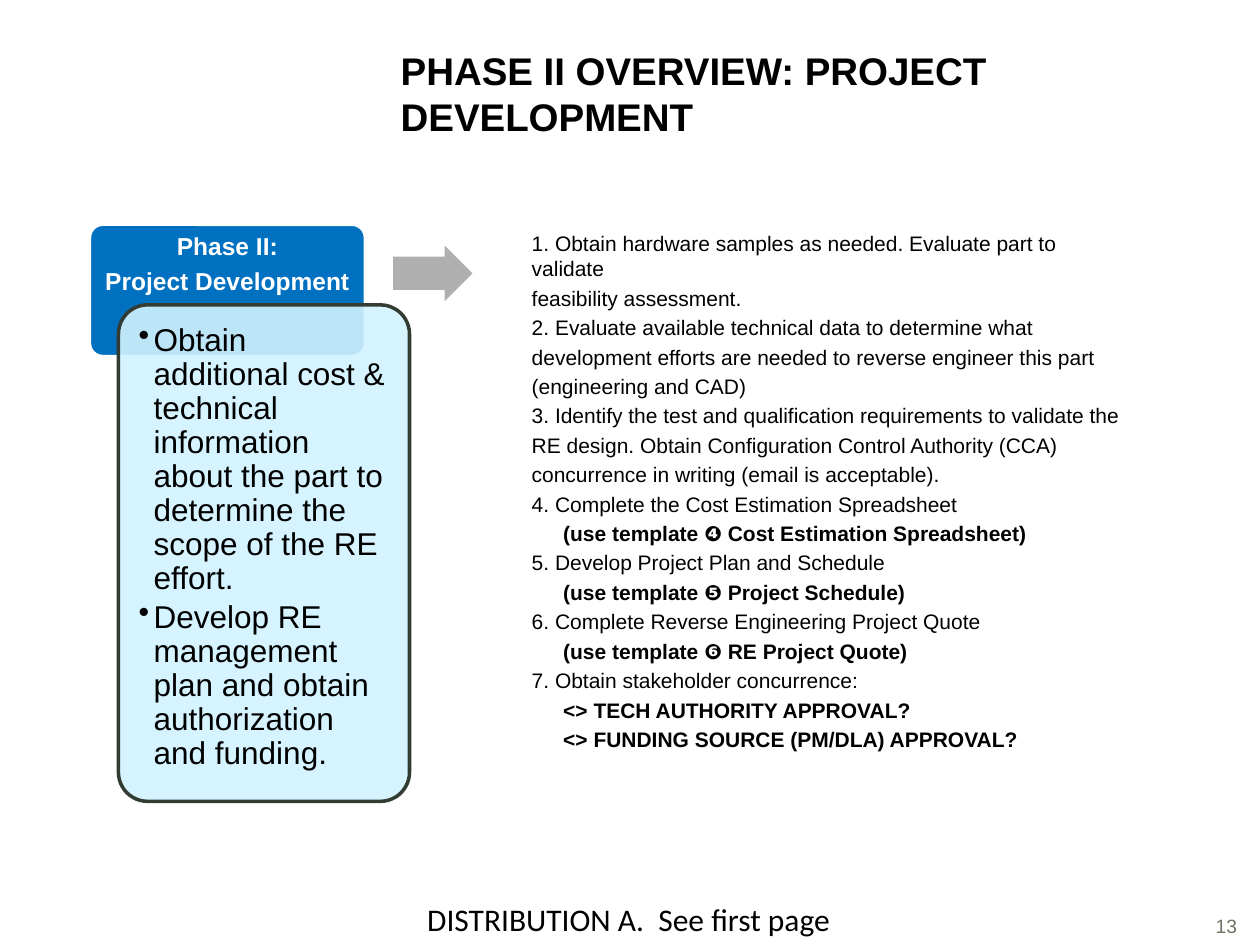
from dataclasses import dataclass

from lxml.etree import SubElement
from pptx import Presentation
from pptx.dml.color import RGBColor
from pptx.enum.shapes import MSO_SHAPE
from pptx.enum.text import MSO_ANCHOR, MSO_AUTO_SIZE, PP_ALIGN
from pptx.oxml.ns import qn
from pptx.util import Inches, Pt


@dataclass(frozen=True)
class Theme:
    font: str = "Arial"
    footer_font: str = "Calibri"
    black: str = "000000"
    white: str = "FFFFFF"
    number_grey: str = "717365"
    phase_blue: str = "0070C0"
    card_blue: str = "D1F3FF"
    card_edge: str = "333C33"
    arrow_grey: str = "AEAFAE"
    title_size: float = 22
    large_size: float = 18
    phase_size: float = 14
    body_size: float = 12
    number_size: float = 11


TITLE = "PHASE II OVERVIEW: PROJECT DEVELOPMENT"
PHASE_LINES = ["Phase II:", "Project Development"]
GOALS = [
    "Obtain additional cost & technical information about the part to "
    "determine the scope of the RE effort.",
    "Develop RE management plan and obtain authorization and funding.",
]
# Each step is its text and whether it is an indented bold line.
STEPS = [
    ("1. Obtain hardware samples as needed. Evaluate part to validate", False),
    ("feasibility assessment.", False),
    ("2. Evaluate available technical data to determine what", False),
    ("development efforts are needed to reverse engineer this part", False),
    ("(engineering and CAD)", False),
    ("3. Identify the test and qualification requirements to validate the", False),
    ("RE design. Obtain Configuration Control Authority (CCA)", False),
    ("concurrence in writing (email is acceptable).", False),
    ("4. Complete the Cost Estimation Spreadsheet", False),
    ("(use template ❹ Cost Estimation Spreadsheet)", True),
    ("5. Develop Project Plan and Schedule", False),
    ("(use template ❺ Project Schedule)", True),
    ("6. Complete Reverse Engineering Project Quote", False),
    ("(use template ❻ RE Project Quote)", True),
    ("7. Obtain stakeholder concurrence:", False),
    ("<> TECH AUTHORITY APPROVAL?", True),
    ("<> FUNDING SOURCE (PM/DLA) APPROVAL?", True),
]


def set_bullet(paragraph, character=None, margin=0, indent=0):
    """Set the paragraph's indents and its bullet, or no bullet."""
    properties = paragraph._p.get_or_add_pPr()
    properties.set("marL", str(Inches(margin)))
    properties.set("indent", str(Inches(indent)))
    if character:
        SubElement(properties, qn("a:buChar")).set("char", character)
    else:
        SubElement(properties, qn("a:buNone"))


class SlideBuilder:
    def __init__(self, slide, theme):
        self.slide = slide
        self.theme = theme

    def style(self, paragraph, size, color=None, bold=False, font=None):
        for run in paragraph.runs:
            run.font.name = font or self.theme.font
            run.font.size = Pt(size)
            run.font.bold = bold
            run.font.color.rgb = RGBColor.from_string(color or self.theme.black)

    def place(self, shape, left, top, width, height):
        shape.left, shape.top = Inches(left), Inches(top)
        shape.width, shape.height = Inches(width), Inches(height)

    def title(self, text, *box):
        shape = self.slide.shapes.title
        self.place(shape, *box)
        frame = shape.text_frame
        frame.text = text
        frame.auto_size = MSO_AUTO_SIZE.NONE
        frame.vertical_anchor = MSO_ANCHOR.MIDDLE
        frame.paragraphs[0].alignment = PP_ALIGN.LEFT
        self.style(frame.paragraphs[0], self.theme.title_size, bold=True)

    def steps(self, steps, *box):
        shape = self.slide.placeholders[1]
        self.place(shape, *box)
        frame = shape.text_frame
        frame.text = "\n".join(text for text, _ in steps)
        frame.auto_size = MSO_AUTO_SIZE.NONE
        size = self.theme.body_size
        for index, (paragraph, (_, detail)) in enumerate(zip(frame.paragraphs, steps)):
            paragraph.level = int(detail)
            set_bullet(paragraph, margin=0.25 if detail else 0)
            paragraph.space_before = Pt(size * 0.2 if index else 0)
            self.style(paragraph, size, bold=detail)

    def shape(self, kind, box, fill, adjustments, line=None, opacity=None):
        shape = self.slide.shapes.add_shape(kind, *map(Inches, box))
        shape.shadow.inherit = False
        for index, value in enumerate(adjustments):
            shape.adjustments[index] = value
        shape.fill.solid()
        shape.fill.fore_color.rgb = RGBColor.from_string(fill)
        if opacity is not None:
            color = shape.fill._xPr.find(f".//{qn('a:srgbClr')}")
            SubElement(color, qn("a:alpha")).set("val", str(opacity * 1000))
        if line:
            shape.line.color.rgb = RGBColor.from_string(line)
            shape.line.width = Pt(2)
        else:
            shape.line.fill.background()

    def text(self, lines, box, size, color=None, bold=False, font=None, insets=None,
             align=PP_ALIGN.LEFT, anchor=MSO_ANCHOR.TOP, bullet=None,
             line_spacing=None, after=0):
        """Add a text box; after is the paragraph gap as a share of the size."""
        frame = self.slide.shapes.add_textbox(*map(Inches, box)).text_frame
        frame.word_wrap = True
        frame.vertical_anchor = anchor
        if insets:
            (frame.margin_left, frame.margin_top,
             frame.margin_right, frame.margin_bottom) = map(Inches, insets)
        frame.text = "\n".join(lines)
        for paragraph in frame.paragraphs:
            if bullet:
                set_bullet(paragraph, bullet, 0.12, -0.12)
            paragraph.alignment = align
            paragraph.line_spacing = line_spacing
            paragraph.space_after = Pt(round(size * after, 1))
            self.style(paragraph, size, color, bold, font)


def main():
    presentation = Presentation()
    presentation.slide_width, presentation.slide_height = Inches(10), Inches(7.5)
    theme = Theme()
    slide = presentation.slides.add_slide(presentation.slide_layouts[1])
    builder = SlideBuilder(slide, theme)

    builder.text(["13"], (9.55, 7.21, 0.46, 0.29), theme.number_size, theme.number_grey)
    builder.text(["DISTRIBUTION A.  See first page"], (0.69, 6.98, 8.6, 0.51),
                 theme.large_size, font=theme.footer_font,
                 align=PP_ALIGN.CENTER, anchor=MSO_ANCHOR.BOTTOM)
    builder.title(TITLE, 3.08, 0.3, 6.09, 0.88)
    builder.steps(STEPS, 4.12, 1.78, 4.89, 4.69)

    rounded = MSO_SHAPE.ROUNDED_RECTANGLE
    builder.shape(rounded, (0.71, 1.78, 2.19, 1.05), theme.phase_blue, [0.1], theme.white)
    builder.text(PHASE_LINES, (0.71, 1.78, 2.19, 0.7), theme.phase_size, theme.white,
                 bold=True, insets=(0.08, 0.08, 0.08, 0.04), align=PP_ALIGN.CENTER,
                 line_spacing=0.9, after=0.35)
    builder.shape(rounded, (0.94, 2.42, 2.31, 3.94), theme.card_blue, [0.1],
                  theme.card_edge, opacity=90)
    builder.text(GOALS, (1.01, 2.48, 2.17, 3.81), theme.large_size, insets=[0.09] * 4,
                 bullet="•", line_spacing=0.9, after=0.15)
    builder.shape(MSO_SHAPE.RIGHT_ARROW, (3.12, 1.95, 0.63, 0.44), theme.arrow_grey,
                  [0.6, 0.5])

    presentation.save("out.pptx")


if __name__ == "__main__":
    main()
